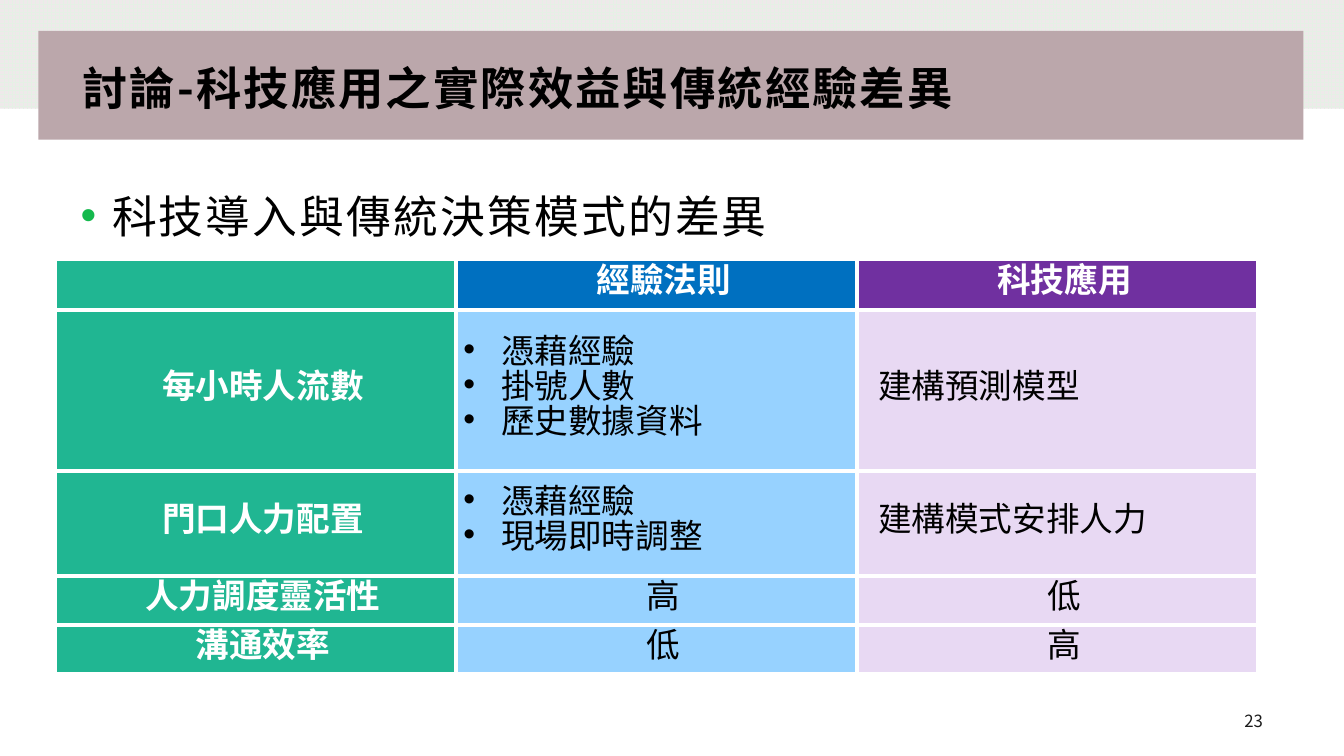
from lxml import etree
from pptx import Presentation
from pptx.dml.color import RGBColor
from pptx.enum.dml import MSO_PATTERN
from pptx.enum.shapes import MSO_SHAPE
from pptx.enum.text import MSO_ANCHOR, MSO_AUTO_SIZE, PP_ALIGN
from pptx.oxml.ns import qn
from pptx.util import Cm, Pt

RECTANGLE = MSO_SHAPE.RECTANGLE
GRID = MSO_PATTERN.LARGE_GRID
MIDDLE = MSO_ANCHOR.MIDDLE
LEFT, CENTER, RIGHT = PP_ALIGN.LEFT, PP_ALIGN.CENTER, PP_ALIGN.RIGHT
NO_AUTOFIT = MSO_AUTO_SIZE.NONE

TITLE = "討論-科技應用之實際效益與傳統經驗差異"
TOPIC = "科技導入與傳統決策模式的差異"
PAGE_NUMBER = "23"
# A list is bulleted, a tuple is left-aligned, a plain string is centred.
ROWS = [
    ("", "經驗法則", "科技應用"),
    ("每小時人流數", ["憑藉經驗", "掛號人數", "歷史數據資料"], ("建構預測模型",)),
    ("門口人力配置", ["憑藉經驗", "現場即時調整"], ("建構模式安排人力",)),
    ("人力調度靈活性", "高", "低"),
    ("溝通效率", "低", "高"),
]
ROW_HEIGHTS = [1.27, 4.06, 2.64, 1.24, 1.24]
COLUMN_WIDTH = 10.1

COLORS = {
    "grid": "E5F0E5", "grid back": "EEE9EA", "title band": "BBA7AB",
    "black": "000000", "white": "FFFFFF", "number": "1A1A1A",
    "bullet": "14B94D", "label": "20B692",
}
HEADER_FILLS = [COLORS["label"], "0070C0", "7030A0"]
BODY_FILLS = [COLORS["label"], "97D2FF", "E8D9F3"]
FONT = "Noto Sans CJK SC"
NUMBER_FONT = "Noto Sans CJK JP"


def rgb(name):
    return RGBColor.from_string(COLORS[name])


def place(shape, left, top, width, height):
    shape.left, shape.top = Cm(left), Cm(top)
    shape.width, shape.height = Cm(width), Cm(height)


def style(para, size, color, bold=False, name=FONT, spacing=0):
    """Set the paragraph font for Latin and East Asian text."""
    font = para.font
    font.size, font.bold, font.name = Pt(size), bold, name
    font.color.rgb = rgb(color)
    properties = para._p.pPr.find(qn("a:defRPr"))
    if spacing:
        properties.set("spc", str(round(spacing * 100)))
    east_asian = etree.Element(qn("a:ea"), typeface=name)
    properties.find(qn("a:latin")).addnext(east_asian)


def indent(para, margin, first_line):
    properties = para._p.get_or_add_pPr()
    properties.set("marL", str(Cm(margin)))
    properties.set("indent", str(Cm(first_line)))


def add_bullet(para, color):
    """Give a styled paragraph a round bullet."""
    defaults = para._p.pPr.find(qn("a:defRPr"))
    tint = etree.Element(qn("a:buClr"))
    etree.SubElement(tint, qn("a:srgbClr"), val=COLORS[color])
    defaults.addprevious(tint)
    defaults.addprevious(etree.Element(qn("a:buFont"), typeface="Arial"))
    defaults.addprevious(etree.Element(qn("a:buChar"), char="•"))


def add_borders(cell, color, width):
    properties = cell._tc.get_or_add_tcPr()
    for position, side in enumerate(("lnL", "lnR", "lnT", "lnB")):
        line = etree.Element(qn(f"a:{side}"), w=str(Pt(width)))
        fill = etree.SubElement(line, qn("a:solidFill"))
        etree.SubElement(fill, qn("a:srgbClr"), val=COLORS[color])
        properties.insert(position, line)


def add_band(page, left, top, width, height):
    """Add a plain band behind the title."""
    band = page.shapes.add_shape(RECTANGLE, Cm(left), Cm(top), Cm(width), Cm(height))
    band.shadow.inherit = False
    band.line.fill.background()
    page.shapes.title.element.addprevious(band.element)
    return band


def fill_cell(cell, content, strong):
    bulleted = isinstance(content, list)
    lines = [content] if isinstance(content, str) else content
    cell.vertical_anchor = MIDDLE
    cell.margin_left = cell.margin_right = Cm(0.18)
    cell.margin_top = cell.margin_bottom = 0
    cell.text = "\n".join(lines)
    for para in cell.text_frame.paragraphs:
        para.alignment = CENTER if isinstance(content, str) else LEFT
        para.line_spacing = Pt(25)
        style(para, 24, "white" if strong else "black", bold=strong)
        if bulleted:
            indent(para, 0.95, -0.95)
            add_bullet(para, "black")
        else:
            indent(para, 0, 0.35)


def add_comparison(page):
    columns = len(ROWS[0])
    frame = page.shapes.add_table(len(ROWS), columns, Cm(1.4), Cm(6.54),
                                  Cm(COLUMN_WIDTH * columns), Cm(sum(ROW_HEIGHTS)))
    table = frame.table
    table.first_row = table.horz_banding = False
    for column in table.columns:
        column.width = Cm(COLUMN_WIDTH)
    for r, (row, height) in enumerate(zip(ROWS, ROW_HEIGHTS)):
        table.rows[r].height = Cm(height)
        fills = BODY_FILLS if r else HEADER_FILLS
        for c, (content, color) in enumerate(zip(row, fills)):
            cell = table.cell(r, c)
            cell.fill.solid()
            cell.fill.fore_color.rgb = RGBColor.from_string(color)
            add_borders(cell, "white", 3)
            fill_cell(cell, content, strong=r == 0 or c == 0)


def main():
    deck = Presentation()
    deck.slide_width, deck.slide_height = Cm(33.87), Cm(19.05)
    page = deck.slides.add_slide(deck.slide_layouts[1])

    backdrop = add_band(page, 0, 0, 33.87, 2.74)
    backdrop.fill.patterned()
    backdrop.fill.pattern = GRID
    backdrop.fill.fore_color.rgb = rgb("grid")
    backdrop.fill.back_color.rgb = rgb("grid back")
    title_band = add_band(page, 0.97, 0.78, 31.88, 2.74)
    title_band.fill.solid()
    title_band.fill.fore_color.rgb = rgb("title band")

    title = page.shapes.title
    place(title, 1.78, 1.32, 30.3, 1.9)
    title.text = TITLE
    box = title.text_frame
    box.auto_size, box.vertical_anchor = NO_AUTOFIT, MIDDLE
    box.margin_left = box.margin_right = box.margin_top = Cm(0.3)
    box.margin_bottom = Cm(0.25)
    para = box.paragraphs[0]
    para.alignment, para.line_spacing = LEFT, 0.9
    style(para, 32.4, "black", bold=True, spacing=1.5)

    body = page.placeholders[1]
    place(body, 1.78, 3.94, 30.3, 14.73)
    body.text = TOPIC
    body.text_frame.auto_size = NO_AUTOFIT
    para = body.text_frame.paragraphs[0]
    para.line_spacing, para.space_before = 1.5, Pt(15)
    style(para, 32, "black", spacing=1.5)
    indent(para, 0.79, -0.79)
    add_bullet(para, "bullet")

    number = page.shapes.add_textbox(Cm(29.74), Cm(17.65), Cm(2.34), Cm(1.02))
    box = number.text_frame
    box.word_wrap, box.vertical_anchor = True, MIDDLE
    box.text = PAGE_NUMBER
    para = box.paragraphs[0]
    para.alignment = RIGHT
    style(para, 12, "number", name=NUMBER_FONT)

    add_comparison(page)
    deck.save("out.pptx")


if __name__ == "__main__":
    main()
